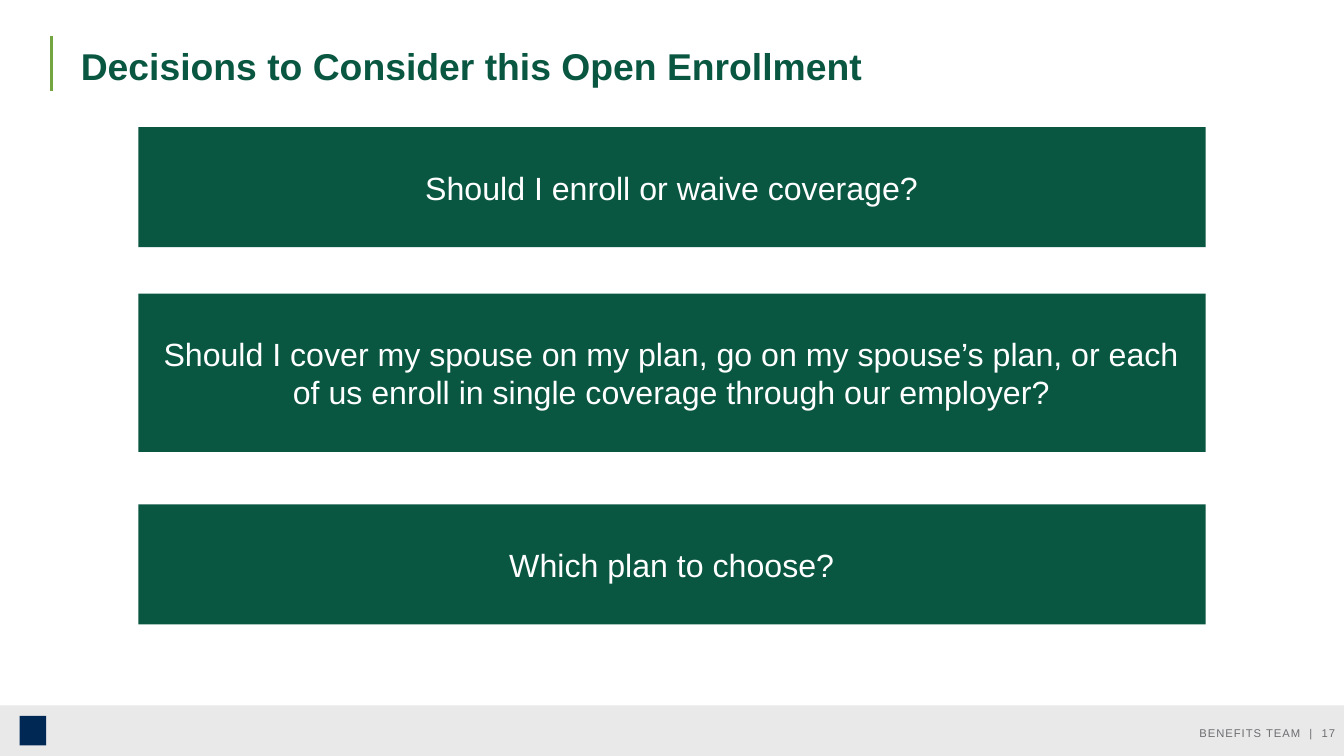
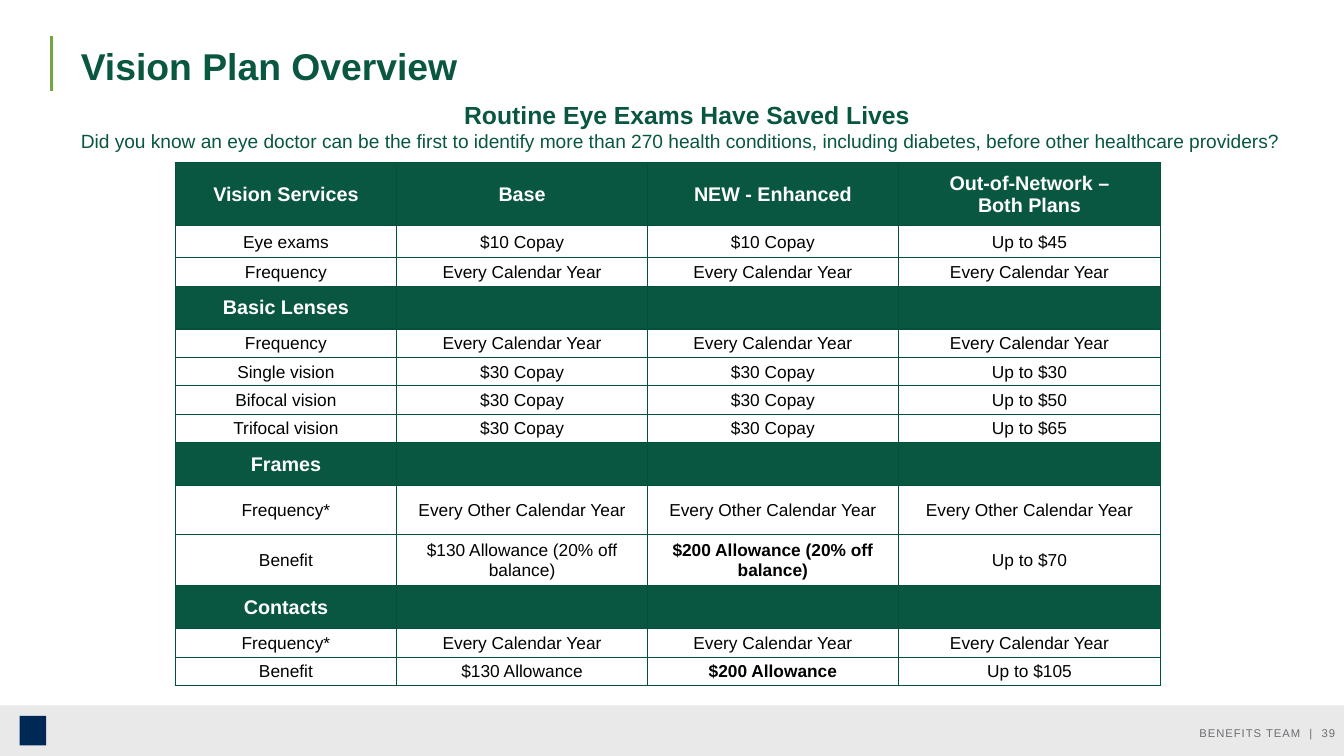
"""Build two open enrollment slides: decision prompts and a vision plan table."""
from lxml import etree
from pptx import Presentation, util as u
from pptx.dml.color import RGBColor
from pptx.enum import shapes, text
from pptx.oxml import ns

W, H = 15.11, 8.5
GREEN, LEAF, NAVY, BORDER = "095641", "73A641", "002855", "00523E"
WHITE, BLACK, BAND, GREY = "FFFFFF", "000000", "E9E9EA", "6D6E71"
LEFT, CENTER, RIGHT = text.PP_ALIGN.LEFT, text.PP_ALIGN.CENTER, text.PP_ALIGN.RIGHT
TOP, MIDDLE = text.MSO_ANCHOR.TOP, text.MSO_ANCHOR.MIDDLE

COMPANY = "BENEFITS TEAM"
CARD_W = 12
CARDS = [
    (1.43, 1.35, "Should I enroll or waive coverage?"),
    (3.3, 1.78, "Should I cover my spouse on my plan, go on my spouse’s plan, "
                "or each of us enroll in single coverage through our employer?"),
    (5.67, 1.35, "Which plan to choose?"),
]
INTRO = [
    ("Routine Eye Exams Have Saved Lives", dict(size=20, bold=True), CENTER),
    ("Did you know an eye doctor can be the first to identify more than 270 health conditions, "
     "including diabetes, before other healthcare providers?", dict(size=15.5), LEFT),
]
YEARLY = ["Every Calendar Year"] * 3
BIENNIAL = ["Every Other Calendar Year"] * 3
COPAY = ["$30 Copay"] * 2
HIGHLIGHTS = {"$200 Allowance (20% off balance)", "$200 Allowance"}
COLS = [2.49, 2.82, 2.82, 2.95]
SECTIONS = [
    (0.71, ["Vision Services", "Base", "NEW - Enhanced", "Out-of-Network –\nBoth Plans"], [
        (0.36, ["Eye exams", "$10 Copay", "$10 Copay", "Up to $45"]),
        (0.32, ["Frequency", *YEARLY])]),
    (0.48, ["Basic Lenses", "", "", ""], [
        (0.32, ["Frequency", *YEARLY]),
        (0.32, ["Single vision", *COPAY, "Up to $30"]),
        (0.32, ["Bifocal vision", *COPAY, "Up to $50"]),
        (0.32, ["Trifocal vision", *COPAY, "Up to $65"])]),
    (0.48, ["Frames", "", "", ""], [
        (0.55, ["Frequency*", *BIENNIAL]),
        (0.58, ["Benefit", "$130 Allowance (20% off balance)",
                "$200 Allowance (20% off balance)", "Up to $70"])]),
    (0.48, ["Contacts", "", "", ""], [
        (0.32, ["Frequency*", *YEARLY]),
        (0.32, ["Benefit", "$130 Allowance", "$200 Allowance", "Up to $105"])]),
]


def rgb(value):
    """Turn a hex string into a colour."""
    return RGBColor.from_string(value)


def inches(*values):
    """Turn numbers into inch lengths."""
    return [u.Inches(v) for v in values]


def write(p, words, align, color, size, bold=False, spacing=0):
    """Write one run into a paragraph."""
    p.alignment = align
    r = p.add_run()
    r.text = words
    for name, value in dict(name="Arial", size=u.Pt(size), bold=bold).items():
        setattr(r.font, name, value)
    r.font.color.rgb = rgb(color)
    if spacing:
        r._r.get_or_add_rPr().set("spc", str(spacing))


def add_rect(s, at, color):
    """Add a plain filled rectangle."""
    sp = s.shapes.add_shape(shapes.MSO_SHAPE.RECTANGLE, *inches(*at))
    sp.shadow.inherit = False
    sp.fill.solid()
    sp.fill.fore_color.rgb = rgb(color)
    sp.line.fill.background()
    return sp


def add_text(s, at, anchor=MIDDLE):
    """Add a wrapping text box and return its frame."""
    tf = s.shapes.add_textbox(*inches(*at)).text_frame
    tf.word_wrap = True
    tf.vertical_anchor = anchor
    return tf


def add_page(prs, title, number):
    """Add a slide with the shared title, accent line and footer."""
    s = prs.slides.add_slide(prs.slide_layouts[6])
    add_rect(s, (0, 7.93, W, H - 7.93), BAND)
    add_rect(s, (0.22, 8.05, 0.3, 0.33), NAVY)
    rule = s.shapes.add_connector(shapes.MSO_CONNECTOR.STRAIGHT, *inches(0.58, 0.4, 0.58, 1.02))
    rule.line.color.rgb = rgb(LEAF)
    rule.line.width = u.Pt(2)
    etree.SubElement(rule._element.spPr, ns.qn("a:effectLst"))
    tf = add_text(s, (0.81, 0.5, 12.13, 0.48))
    write(tf.paragraphs[0], title, LEFT, GREEN, 30.2, True)
    tf = add_text(s, (W - 3.4, 8.06, 3.4, 0.36))
    write(tf.paragraphs[0], f"{COMPANY}  |  {number}", RIGHT, GREY, 9.1, spacing=80)
    return s


def add_borders(cell):
    """Draw a thin border on every side of a cell."""
    tcPr = cell._tc.get_or_add_tcPr()
    for side in ("lnL", "lnR", "lnT", "lnB"):
        ln = etree.SubElement(tcPr, ns.qn(f"a:{side}"), w=str(u.Pt(1)))
        fill = etree.SubElement(ln, ns.qn("a:solidFill"))
        etree.SubElement(fill, ns.qn("a:srgbClr"), val=BORDER)


def fill_cell(cell, words, heading):
    """Style one table cell and write its lines."""
    add_borders(cell)
    if heading:
        cell.fill.solid()
        cell.fill.fore_color.rgb = rgb(GREEN)
    else:
        cell.fill.background()
    for side, value in dict(left=0.01, right=0.01, top=0.01, bottom=0).items():
        setattr(cell, f"margin_{side}", u.Inches(value))
    cell.vertical_anchor = MIDDLE
    color, size = (WHITE, 16) if heading else (BLACK, 14)
    tf = cell.text_frame
    for i, line in enumerate(words.split("\n") if words else []):
        p = tf.add_paragraph() if i else tf.paragraphs[0]
        write(p, line, CENTER, color, size, heading or words in HIGHLIGHTS)


def add_plan_table(s):
    """Add the vision plan table."""
    rows = []
    for height, heads, body in SECTIONS:
        rows.append((height, heads, True))
        rows += [(h, cells, False) for h, cells in body]
    total = sum(height for height, _, _ in rows)
    table = s.shapes.add_table(len(rows), len(COLS), *inches(1.97, 1.83, sum(COLS), total)).table
    table.first_row = table.horz_banding = False
    for col, width in zip(table.columns, COLS):
        col.width = u.Inches(width)
    for row, (height, cells, heading) in zip(table.rows, rows):
        row.height = u.Inches(height)
        for cell, words in zip(row.cells, cells):
            fill_cell(cell, words, heading)


def main():
    """Build and save the slides."""
    prs = Presentation()
    prs.slide_width, prs.slide_height = inches(W, H)

    s = add_page(prs, "Decisions to Consider this Open Enrollment", 17)
    for top, height, question in CARDS:
        sp = add_rect(s, ((W - CARD_W) / 2, top, CARD_W, height), GREEN)
        tf = sp.text_frame
        tf.word_wrap = True
        tf.vertical_anchor = MIDDLE
        write(tf.paragraphs[0], question, CENTER, WHITE, 26)

    s = add_page(prs, "Vision Plan Overview", 39)
    add_plan_table(s)
    tf = add_text(s, (0.81, 1.07, 13.83, 0.7), TOP)
    for i, (words, style, align) in enumerate(INTRO):
        p = tf.add_paragraph() if i else tf.paragraphs[0]
        write(p, words, align, GREEN, **style)

    prs.save("out.pptx")


if __name__ == "__main__":
    main()
